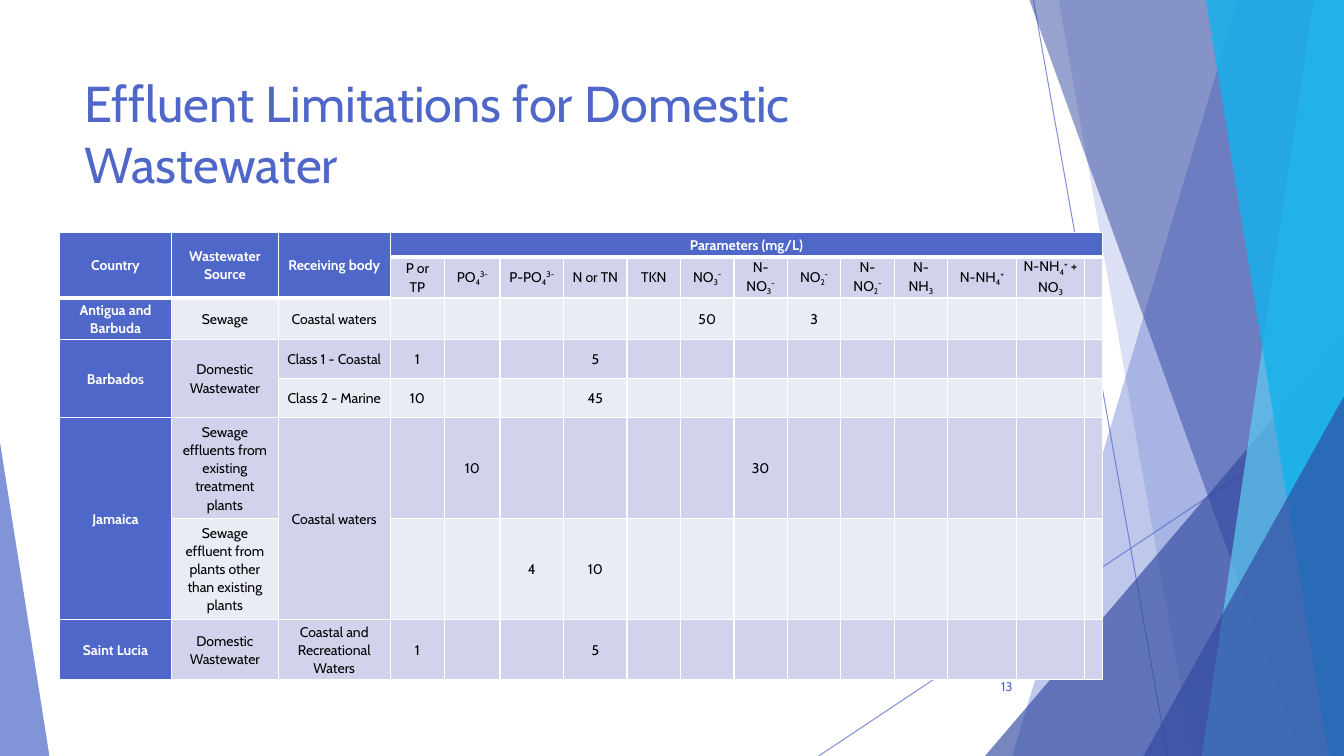
import pptx
import pptx.dml.color
import pptx.enum.shapes
import pptx.enum.text
import pptx.oxml
import pptx.oxml.ns
import pptx.util

RGB = pptx.dml.color.RGBColor
Inches = pptx.util.Inches
Pt = pptx.util.Pt
Align = pptx.enum.text.PP_ALIGN
Anchor = pptx.enum.text.MSO_ANCHOR

BLUE = RGB(0x4E, 0x67, 0xC8)
NAVY = RGB(0x31, 0x48, 0x9F)
SKY = RGB(0x5E, 0xCC, 0xF3)
CYAN = RGB(0x12, 0xB2, 0xEB)
BAND_DARK = RGB(0xD0, 0xD3, 0xEB)
BAND_LIGHT = RGB(0xE9, 0xEB, 0xF5)
WHITE = RGB(0xFF, 0xFF, 0xFF)
BLACK = RGB(0, 0, 0)
FONT = "Cabin"
WIDTH, HEIGHT = 13.33, 7.5

COLUMNS = [1.11, 1.06, 1.11, 0.54, 0.55, 0.63, 0.63] + [0.53] * 6 + [0.68, 0.68, 0.11]
ROWS = [0.24, 0.4, 0.41, 0.39, 0.39, 1, 1, 0.6]

# "|" parts a formula; "_" lowers a part and "^" raises it
PARAMETERS = ["P or TP", "PO|_4|^3-", "P-PO|_4|^3-", "N or TN", "TKN", "NO|_3|^-",
              "N-NO|_3|^-", "NO|_2|^-", "N-NO|_2|^-", "N-NH|_3", "N-NH|_4|^+",
              "N-NH|_4|^+| + NO|_3"]
BASELINES = {"_": "-25000", "^": "30000"}

# (row, column): text
LABELS = {
    (0, 0): "Country", (0, 1): "Wastewater Source", (0, 2): "Receiving body",
    (0, 3): "Parameters (mg/L)",
    (2, 0): "Antigua and Barbuda", (2, 1): "Sewage", (2, 2): "Coastal waters",
    (3, 0): "Barbados", (3, 1): "Domestic Wastewater", (3, 2): "Class 1 - Coastal",
    (4, 2): "Class 2 - Marine",
    (5, 0): "Jamaica", (5, 1): "Sewage effluents from existing treatment plants",
    (5, 2): "Coastal waters",
    (6, 1): "Sewage effluent from plants other than existing plants",
    (7, 0): "Saint Lucia", (7, 1): "Domestic Wastewater",
    (7, 2): "Coastal and Recreational Waters",
}
LIMITS = {(2, 8): "50", (2, 10): "3", (3, 3): "1", (3, 6): "5", (4, 3): "10", (4, 6): "45",
          (5, 4): "10", (5, 9): "30", (6, 5): "4", (6, 6): "10", (7, 3): "1", (7, 6): "5"}
# (first row, first column, last row, last column)
MERGES = [(0, 0, 1, 0), (0, 1, 1, 1), (0, 2, 1, 2), (0, 3, 0, 15),
          (3, 0, 4, 0), (3, 1, 4, 1), (5, 0, 6, 0), (5, 2, 6, 2)]


def style_font(font, size, color, bold=False):
    font.name, font.size, font.bold = FONT, Pt(size), bold
    font.color.rgb = color


def set_opacity(shape, percent):
    for color in shape._element.spPr.iter(pptx.oxml.ns.qn("a:srgbClr")):
        pptx.oxml.ns.qn("a:alpha")
        alpha = color.makeelement(pptx.oxml.ns.qn("a:alpha"), {"val": str(percent * 1000)})
        color.append(alpha)


def paint_facet(facet, color, opacity):
    facet.shadow.inherit = False
    facet.fill.solid()
    facet.fill.fore_color.rgb = color
    facet.line.fill.background()
    set_opacity(facet, opacity)


def add_backdrop(slide, width, height):
    """Translucent facets and thin lines along the sides of a box of this size."""
    facets = slide.shapes.add_group_shape().shapes

    def add_ray(start, end):
        ray = facets.add_connector(pptx.enum.shapes.MSO_CONNECTOR.STRAIGHT,
                                   *map(Inches, start + end))
        ray.line.color.rgb = BLUE
        ray.line.width = Pt(0.75)
        set_opacity(ray, 70)
        properties = ray._element.spPr
        properties.append(properties.makeelement(pptx.oxml.ns.qn("a:effectLst"), {}))

    def add_band(top_x, bottom_x, color, opacity):
        outline = facets.build_freeform(Inches(top_x), 0)
        outline.add_line_segments([(Inches(x), Inches(y)) for x, y in
                                   [(width, 0), (width, height), (bottom_x, height)]])
        paint_facet(outline.convert_to_shape(), color, opacity)

    def add_corner(left, top, right, apex, color, opacity):
        corner = facets.add_shape(pptx.enum.shapes.MSO_SHAPE.ISOSCELES_TRIANGLE,
                                  Inches(left), Inches(top),
                                  Inches(right - left), Inches(height - top))
        corner.adjustments[0] = apex
        paint_facet(corner, color, opacity)

    add_ray((10.25, 0), (11.58, height))
    add_ray((width, 4.03), (8.12, height))
    add_band(12.28, 10.04, BLUE, 36)
    add_band(10.5, 11.83, BLUE, 20)
    add_corner(9.77, 3.33, width, 1, NAVY, 66)
    add_band(10.21, 12.91, NAVY, 50)
    add_band(13.03, 11.92, SKY, 70)
    add_band(11.96, 13.18, CYAN, 80)
    add_corner(11.34, 3.93, width, 1, NAVY, 66)
    add_corner(0, 4.39, 0.49, 0, BLUE, 70)


def place_title(slide, left, top, width, height):
    title = slide.shapes.title
    title.left, title.top, title.width, title.height = map(Inches, (left, top, width, height))
    frame = title.text_frame
    frame.text = "Effluent Limitations for Domestic Wastewater"
    frame.auto_size = pptx.enum.text.MSO_AUTO_SIZE.NONE
    frame.vertical_anchor = Anchor.TOP
    frame.paragraphs[0].alignment = Align.LEFT
    style_font(frame.paragraphs[0].runs[0].font, 36, BLUE)


def add_page_number(slide, left, top, width, height):
    frame = slide.shapes.add_textbox(*map(Inches, (left, top, width, height))).text_frame
    frame.word_wrap = True
    frame.vertical_anchor = Anchor.MIDDLE
    frame.text = "13"
    frame.paragraphs[0].alignment = Align.RIGHT
    style_font(frame.paragraphs[0].runs[0].font, 9, BLUE)


def add_borders(cell, bottom):
    properties = cell._tc.get_or_add_tcPr()
    for side, points in (("L", 1), ("R", 1), ("T", 1), ("B", bottom)):
        properties.append(pptx.oxml.parse_xml(
            f'<a:ln{side} {pptx.oxml.ns.nsdecls("a")} w="{Pt(points)}"><a:solidFill>'
            f'<a:srgbClr val="{WHITE}"/></a:solidFill></a:ln{side}>'))


def write_cell(cell, text, heading):
    paragraph = cell.text_frame.paragraphs[0]
    paragraph.alignment = Align.CENTER
    paragraph.line_spacing = 1.07
    if not text:
        paragraph._p.get_or_add_endParaRPr().set("sz", "1000")
        return
    for part in text.split("|"):
        run = paragraph.add_run()
        run.text = part.lstrip("_^")
        style_font(run.font, 10, WHITE if heading else BLACK, heading)
        if part[0] in BASELINES:
            run._r.get_or_add_rPr().set("baseline", BASELINES[part[0]])


def add_limits_table(slide, left, top):
    texts = {**LABELS, **LIMITS}
    texts.update({(1, 3 + i): name for i, name in enumerate(PARAMETERS)})
    table = slide.shapes.add_table(len(ROWS), len(COLUMNS), Inches(left), Inches(top),
                                   Inches(sum(COLUMNS)), Inches(sum(ROWS))).table
    table.first_col = True
    for column, width in zip(table.columns, COLUMNS):
        column.width = Inches(width)
    for r, height in enumerate(ROWS):
        table.rows[r].height = Inches(height)
        for c in range(len(COLUMNS)):
            cell = table.cell(r, c)
            heading = r == 0 or c == 0 or (r == 1 and c < 3)
            cell.vertical_anchor = Anchor.MIDDLE
            cell.margin_left = cell.margin_right = Inches(0.07)
            cell.margin_top = cell.margin_bottom = 0
            add_borders(cell, 3 if r == 0 or (r == 1 and c < 3) else 1)
            cell.fill.solid()
            cell.fill.fore_color.rgb = BLUE if heading else BAND_DARK if r % 2 else BAND_LIGHT
            write_cell(cell, texts.get((r, c), ""), heading)
    for first_row, first_column, last_row, last_column in MERGES:
        table.cell(first_row, first_column).merge(table.cell(last_row, last_column))


def main():
    deck = pptx.Presentation()
    deck.slide_width, deck.slide_height = Inches(WIDTH), Inches(HEIGHT)
    slide = deck.slides.add_slide(deck.slide_layouts[5])
    add_backdrop(slide, WIDTH, HEIGHT)
    place_title(slide, 0.74, 0.67, 9.4, 1.44)
    add_page_number(slide, 9.39, 6.61, 0.75, 0.4)
    add_limits_table(slide, 0.59, 2.31)
    deck.save("out.pptx")


if __name__ == "__main__":
    main()
